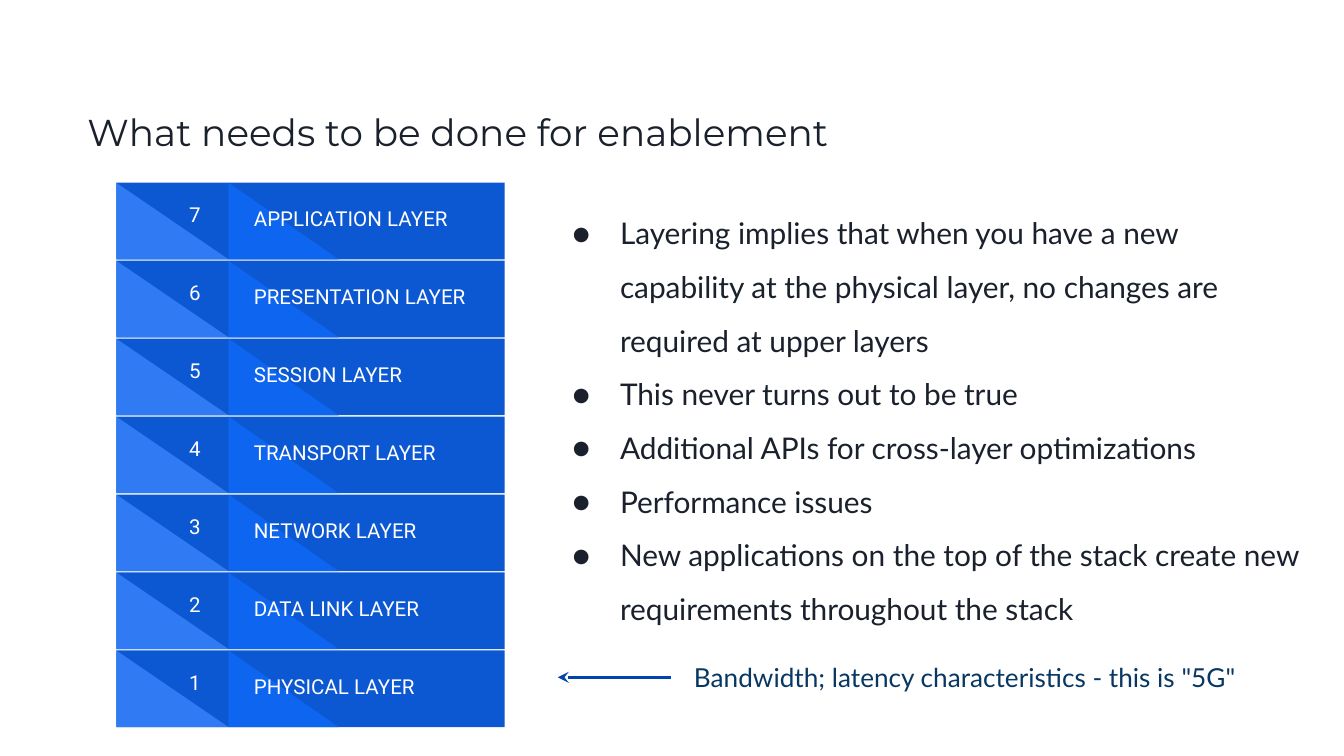
from lxml.etree import SubElement as Sub
from pptx import Presentation
from pptx.dml.color import RGBColor as Rgb
from pptx.enum.shapes import MSO_CONNECTOR as Conn, MSO_SHAPE as Kind
from pptx.enum.text import MSO_ANCHOR as Anchor, MSO_AUTO_SIZE as Auto, PP_ALIGN as Align
from pptx.oxml.ns import qn
from pptx.util import Pt

PX = 4572
INK, WHITE = "1B212C", "FFFFFF"


def tint(color, code):
    color.rgb = Rgb.from_string(code)


def write(box, lines, face, size, code, **form):
    frame = box.text_frame
    look = dict(word_wrap=True, auto_size=Auto.NONE, vertical_anchor=Anchor.TOP)
    look.update({f"margin_{side}": 20 * PX for side in ("left", "right", "top", "bottom")})
    look.update(form)
    align = look.pop("align", Align.LEFT)
    for key, val in look.items():
        setattr(frame, key, val)
    for num, line in enumerate(lines):
        para = frame.add_paragraph() if num else frame.paragraphs[0]
        para.alignment = align
        run = para.add_run()
        run.text = line
        for key, val in dict(name=face, size=Pt(size), bold=False).items():
            setattr(run.font, key, val)
        tint(run.font.color, code)


deck = Presentation()
deck.slide_width, deck.slide_height = 2000 * PX, 1125 * PX
slide = deck.slides.add_slide(deck.slide_layouts[5])
shapes = slide.shapes

title = shapes.title
spot = dict(left=110, top=142, width=1540, height=130)
for key, val in spot.items():
    setattr(title, key, val * PX)
write(title, ["What needs to be done for enablement"], "Montserrat", 20, INK)

names = ["APPLICATION", "PRESENTATION", "SESSION", "TRANSPORT", "NETWORK", "DATA LINK", "PHYSICAL"]
parts = [
    (Kind.RECTANGLE, 173, 578, "0C58D3"),
    (Kind.RIGHT_TRIANGLE, 340, 164, "0E65F0"),
    (Kind.RIGHT_TRIANGLE, 173, 167, "307BF3"),
]
for row, name in enumerate(names):
    top = 272 + 116 * row
    group = shapes.add_group_shape().shapes
    for kind, left, width, code in parts:
        part = group.add_shape(kind, left * PX, top * PX, width * PX, 114 * PX)
        part.shadow.inherit = False
        part.fill.solid()
        tint(part.fill.fore_color, code)
        part.line.fill.background()
    digit = group.add_textbox(238 * PX, (top + 15) * PX, 104 * PX, 70 * PX)
    write(digit, [str(7 - row)], "Roboto", 11, WHITE, vertical_anchor=Anchor.BOTTOM, align=Align.CENTER)
    label = group.add_textbox(358 * PX, (top + 15) * PX, 362 * PX, 114 * PX)
    write(label, [f"{name} LAYER"], "Roboto", 11, WHITE)

arrow = shapes.add_connector(Conn.STRAIGHT, 830 * PX, 1008 * PX, 998 * PX, 1008 * PX)
arrow.line.width = Pt(1.5)
tint(arrow.line.color, "0145AC")
Sub(arrow.line._get_or_add_ln(), qn("a:headEnd"), type="stealth")
Sub(arrow._element.spPr, qn("a:effectLst"))

note = shapes.add_textbox(1013 * PX, 932 * PX, 958 * PX, 152 * PX)
write(note, ['Bandwidth; latency characteristics - this is "5G"'], "Lato", 14, "073763",
      vertical_anchor=Anchor.MIDDLE)

points = [
    "Layering implies that when you have a new capability at the physical layer, "
    "no changes are required at upper layers",
    "This never turns out to be true",
    "Additional APIs for cross-layer optimizations",
    "Performance issues",
    "New applications on the top of the stack create new requirements throughout the stack",
]
body = shapes.add_textbox(803 * PX, 273 * PX, 1158 * PX, 564 * PX)
write(body, points, "Lato", 16, INK)
for para in body.text_frame.paragraphs:
    props = para._p.get_or_add_pPr()
    props.set("marL", str(100 * PX))
    props.set("indent", str(-71 * PX))
    Sub(Sub(props, qn("a:buClr")), qn("a:srgbClr"), val=INK)
    Sub(props, qn("a:buFont"), typeface="Lato")
    Sub(props, qn("a:buChar"), char="●")
    para.line_spacing = 1.5

deck.save("out.pptx")
